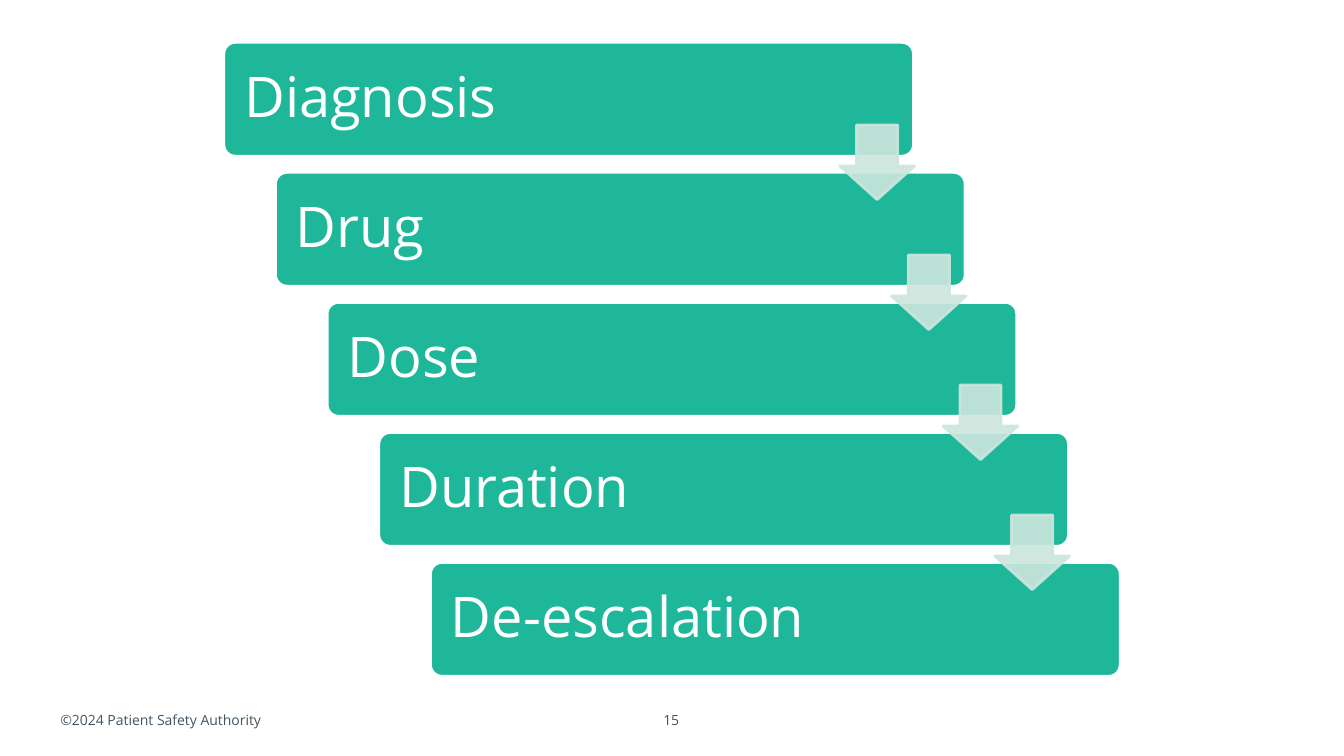
from lxml import etree
from pptx import Presentation
from pptx.dml.color import RGBColor
from pptx.enum.shapes import MSO_SHAPE
from pptx.enum.text import MSO_ANCHOR, PP_ALIGN
from pptx.oxml.ns import qn
from pptx.util import Inches, Pt

STEPS = ["Diagnosis", "Drug", "Dose", "Duration", "De-escalation"]
STEP_RIGHT, STEP_DOWN = 0.5125, 1.29


def write(shape, text, size, color, anchor):
    frame = shape.text_frame
    frame.vertical_anchor = anchor
    para = frame.paragraphs[0]
    para.alignment = PP_ALIGN.LEFT
    span = para.add_run()
    span.text = text
    span.font.name = "Open Sans"
    span.font.size = Pt(size)
    span.font.color.rgb = RGBColor.from_string(color)
    return frame


def add_block(kind, left, top, width, height, adjustments, fill, line):
    block = page.shapes.add_shape(
        kind, Inches(left), Inches(top), Inches(width), Inches(height))
    block.shadow.inherit = False
    for index, value in enumerate(adjustments):
        block.adjustments[index] = value
    block.fill.solid()
    block.fill.fore_color.rgb = RGBColor.from_string(fill)
    block.line.color.rgb = RGBColor.from_string(line)
    block.line.width = Pt(2)
    return block


deck = Presentation()
deck.slide_width, deck.slide_height = Inches(13.33), Inches(7.5)
page = deck.slides.add_slide(deck.slide_layouts[6])

# Footer
for text, left, width in [("©2024 Patient Safety Authority", 0.5, 2.41),
                          ("15", 6.48, 0.39)]:
    footer = page.shapes.add_textbox(
        Inches(left), Inches(7), Inches(width), Inches(0.27))
    write(footer, text, 10, "425563", MSO_ANCHOR.BOTTOM).word_wrap = False

# Staircase of steps
for index, step in enumerate(STEPS):
    bar = add_block(MSO_SHAPE.ROUNDED_RECTANGLE,
                    2.22 + index * STEP_RIGHT, 0.42 + index * STEP_DOWN,
                    6.84, 1.13, [0.1], "1EB79A", "FFFFFF")
    frame = write(bar, step, 40, "FFFFFF", MSO_ANCHOR.MIDDLE)
    for side in ("left", "top", "right", "bottom"):
        setattr(frame, f"margin_{side}", Inches(0.17))
    frame.paragraphs[0].line_spacing = 0.9
    frame.paragraphs[0].space_after = Pt(14)

# Arrows from each step to the next, slightly see-through
for index in range(len(STEPS) - 1):
    arrow = add_block(MSO_SHAPE.DOWN_ARROW,
                      8.33 + index * STEP_RIGHT, 1.24 + index * STEP_DOWN,
                      0.74, 0.74, [0.55, 0.45], "CDE6DE", "CDE6DE")
    for color in arrow._element.spPr.iter(qn("a:srgbClr")):
        etree.SubElement(color, qn("a:alpha"), val="90000")

deck.save("out.pptx")
